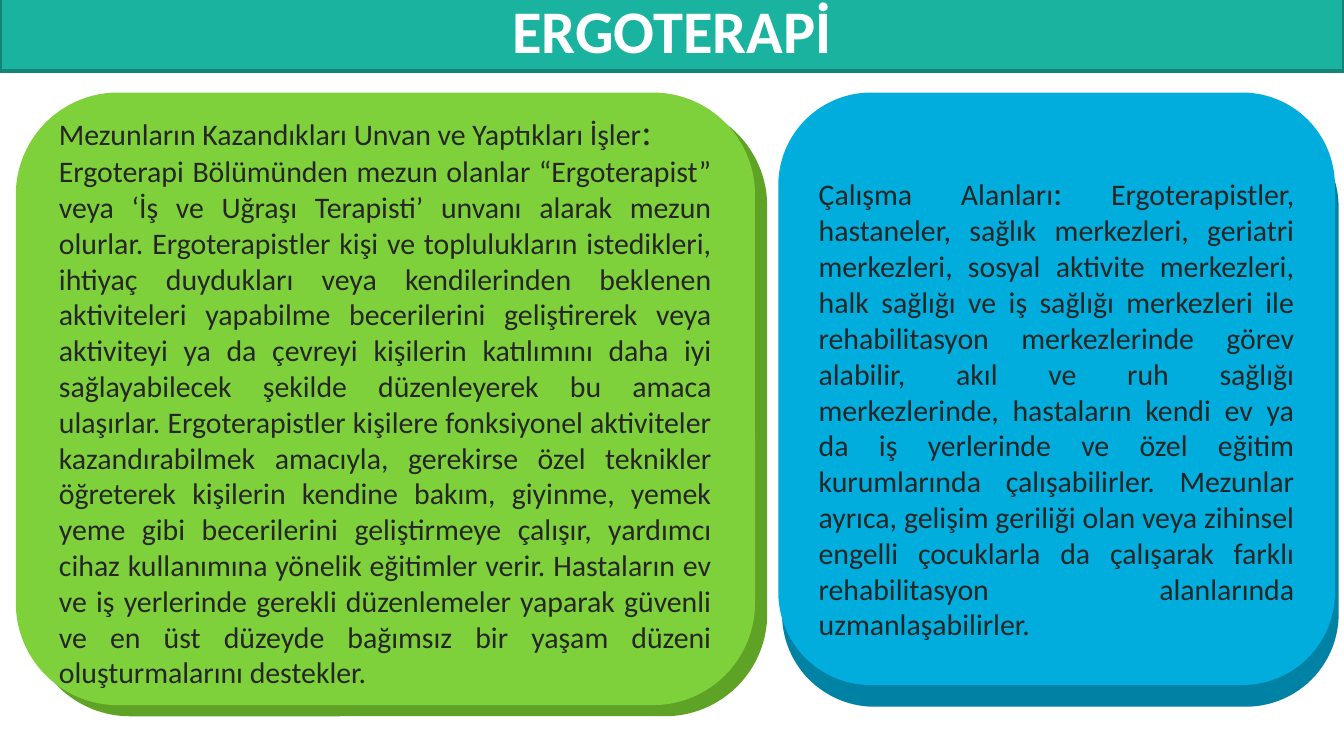
"""Build the occupational therapy slide: a title band and two raised text cards."""
from dataclasses import dataclass

import pptx
import pptx.dml.color
import pptx.enum.shapes
import pptx.enum.text
import pptx.util

Cm = pptx.util.Cm
ALIGN = pptx.enum.text.PP_ALIGN
SHAPE = pptx.enum.shapes.MSO_SHAPE


@dataclass(frozen=True)
class Theme:
    font: str = "Calibri"
    band: str = "1AB39F"
    band_line: str = "138476"
    green: str = "7FD13B"
    green_dark: str = "5FA326"
    blue: str = "00ADDC"
    blue_dark: str = "0082A5"
    white: str = "FFFFFF"
    ink: str = "262626"
    title_size: float = 32.4
    body_size: float = 16
    large_colon: float = 20
    small_colon: float = 18


theme = Theme()


def add_box(shapes, kind, left, top, width, height, fill):
    shape = shapes.add_shape(kind, Cm(left), Cm(top), Cm(width), Cm(height))
    shape.shadow.inherit = False
    shape.fill.solid()
    shape.fill.fore_color.rgb = pptx.dml.color.RGBColor.from_string(fill)
    shape.line.fill.background()
    return shape


def add_text(paragraph, text, *, size=theme.body_size, color=theme.ink, bold=False, align=ALIGN.JUSTIFY):
    paragraph.alignment = align
    run = paragraph.add_run()
    run.text = text
    run.font.name = theme.font
    run.font.size = pptx.util.Pt(size)
    run.font.bold = bold
    run.font.color.rgb = pptx.dml.color.RGBColor.from_string(color)


presentation = pptx.Presentation()
presentation.slide_width = Cm(25.4)
presentation.slide_height = Cm(14.29)
slide = presentation.slides.add_slide(presentation.slide_layouts[6])

band = add_box(slide.shapes, SHAPE.RECTANGLE, 0, -0.25, 25.4, 1.6, theme.band)
band.line.color.rgb = pptx.dml.color.RGBColor.from_string(theme.band_line)
band.line.width = pptx.util.Pt(2)
band.text_frame.margin_top = band.text_frame.margin_bottom = Cm(0.1)
band.text_frame.vertical_anchor = pptx.enum.text.MSO_ANCHOR.MIDDLE
add_text(band.text_frame.paragraphs[0], "ERGOTERAPİ", size=theme.title_size,
         color=theme.white, bold=True, align=ALIGN.CENTER)

graduate_text = (
    "Ergoterapi Bölümünden mezun olanlar “Ergoterapist” veya ‘İş ve Uğraşı Terapisti’ unvanı alarak "
    "mezun olurlar. Ergoterapistler kişi ve toplulukların istedikleri, ihtiyaç duydukları veya "
    "kendilerinden beklenen aktiviteleri yapabilme becerilerini geliştirerek veya aktiviteyi ya da "
    "çevreyi kişilerin katılımını daha iyi sağlayabilecek şekilde düzenleyerek bu amaca ulaşırlar. "
    "Ergoterapistler kişilere fonksiyonel aktiviteler kazandırabilmek amacıyla, gerekirse özel "
    "teknikler öğreterek kişilerin kendine bakım, giyinme, yemek yeme gibi becerilerini geliştirmeye "
    "çalışır, yardımcı cihaz kullanımına yönelik eğitimler verir. Hastaların ev ve iş yerlerinde "
    "gerekli düzenlemeler yaparak güvenli ve en üst düzeyde bağımsız bir yaşam düzeni "
    "oluşturmalarını destekler."
)
workplace_text = (
    " Ergoterapistler, hastaneler, sağlık merkezleri, geriatri merkezleri, sosyal aktivite "
    "merkezleri, halk sağlığı ve iş sağlığı merkezleri ile rehabilitasyon merkezlerinde görev "
    "alabilir, akıl ve ruh sağlığı merkezlerinde, hastaların kendi ev ya da iş yerlerinde ve özel "
    "eğitim kurumlarında çalışabilirler. Mezunlar ayrıca, gelişim geriliği olan veya zihinsel "
    "engelli çocuklarla da çalışarak farklı rehabilitasyon alanlarında uzmanlaşabilirler."
)

card_top = 1.75
cards = [
    dict(left=0.3, width=13.97, height=11.58, offset=(0.23, 0.21), margin_top=0.13,
         fill=theme.green, shade=theme.green_dark,
         paragraphs=[
             [("Mezunların Kazandıkları Unvan ve Yaptıkları İşler", theme.body_size),
              (":", theme.large_colon)],
             [(graduate_text, theme.body_size)],
         ]),
    dict(left=14.71, width=10.52, height=11.2, offset=(0.07, 0.41), margin_top=0.81,
         fill=theme.blue, shade=theme.blue_dark,
         paragraphs=[
             [("Çalışma Alanları", theme.body_size), (":", theme.small_colon),
              (workplace_text, theme.body_size)],
         ]),
]

for card in cards:
    group = slide.shapes.add_group_shape()
    shift_x, shift_y = card["offset"]
    size = card["width"], card["height"]
    add_box(group.shapes, SHAPE.ROUNDED_RECTANGLE, card["left"] + shift_x, card_top + shift_y,
            *size, card["shade"])
    face = add_box(group.shapes, SHAPE.ROUNDED_RECTANGLE, card["left"], card_top, *size, card["fill"])
    frame = face.text_frame
    frame.word_wrap = True
    frame.vertical_anchor = pptx.enum.text.MSO_ANCHOR.MIDDLE
    frame.margin_top = Cm(card["margin_top"])
    for index, runs in enumerate(card["paragraphs"]):
        paragraph = frame.add_paragraph() if index else frame.paragraphs[0]
        for text, text_size in runs:
            add_text(paragraph, text, size=text_size)

presentation.save("out.pptx")
